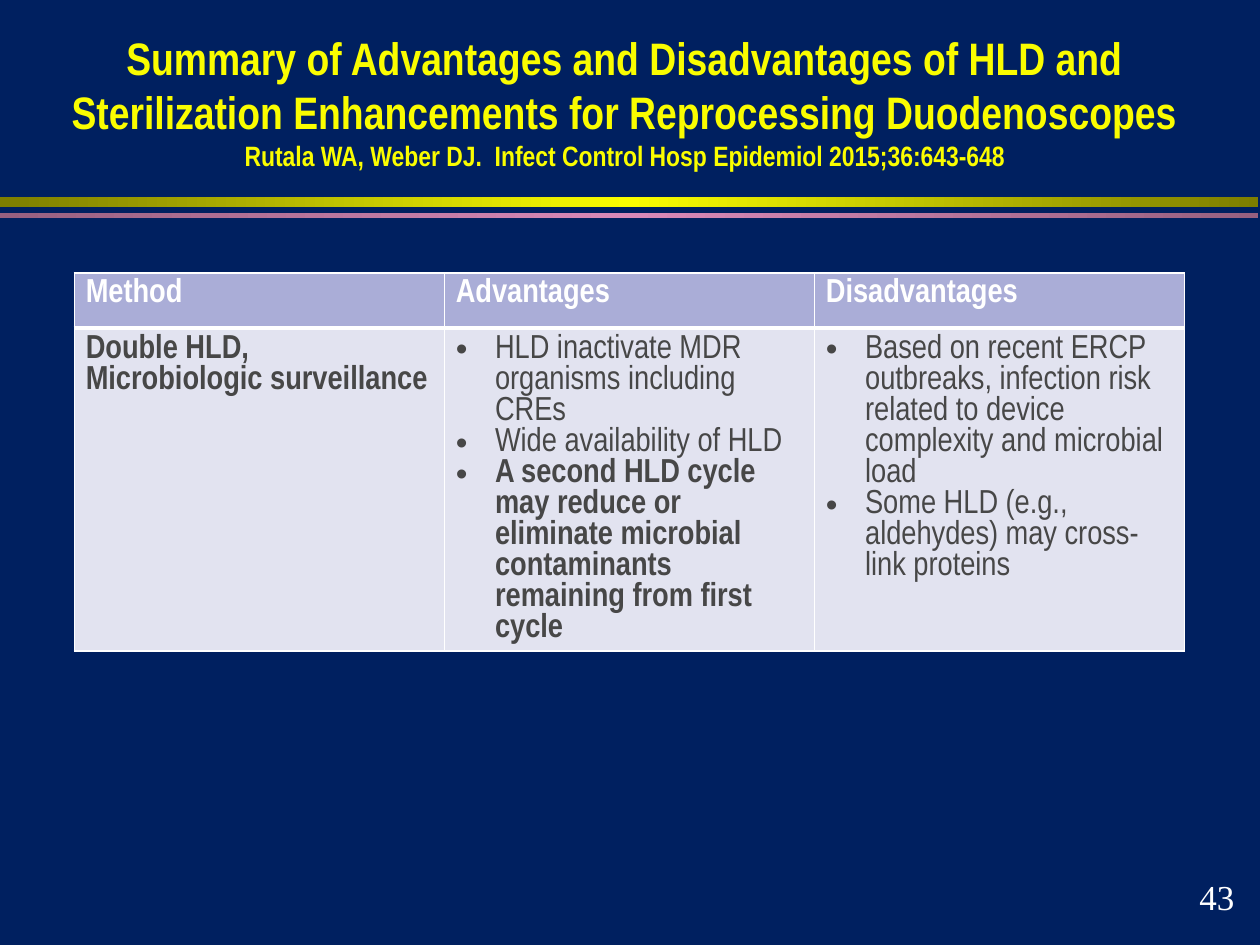
from copy import deepcopy
from dataclasses import dataclass

from lxml import etree
from pptx import Presentation, util as u
from pptx.dml.color import RGBColor
from pptx.enum import shapes, text
from pptx.oxml import ns

NARROW = "Arial Narrow"
YELLOW = "FAFD00"
WHITE = "FFFFFF"
GREY = "474747"


@dataclass
class Band:
    top: float
    height: float
    edge: str
    middle: str


@dataclass
class Item:
    text: str
    bold: bool = False
    color: str = GREY
    bullet: bool = False


BANDS = [
    Band(3.97, 0.2, "7D7E00", YELLOW),
    Band(4.29, 0.1, "976080", "D989B8"),
]

HEADER = [
    [Item(name, bold=True, color=WHITE)]
    for name in ("Method", "Advantages", "Disadvantages")
]
BODY = [
    [Item("Double HLD, Microbiologic surveillance", bold=True)],
    [
        Item("HLD inactivate MDR organisms including CREs", bullet=True),
        Item("Wide availability of HLD", bullet=True),
        Item(
            "A second HLD cycle may reduce or eliminate microbial "
            "contaminants remaining from first cycle",
            bold=True,
            bullet=True,
        ),
    ],
    [
        Item(
            "Based on recent ERCP outbreaks, infection risk related to "
            "device complexity and microbial load",
            bullet=True,
        ),
        Item("Some HLD (e.g., aldehydes) may cross-link proteins", bullet=True),
    ],
]


def rgb(value: str) -> RGBColor:
    return RGBColor.from_string(value)


def add_text(p, content: str, *, size: float, color: str, font: str = NARROW,
             bold: bool = False) -> None:
    r = p.add_run()
    r.text = content
    r.font.size = u.Pt(size)
    r.font.name = font
    r.font.bold = bold
    r.font.color.rgb = rgb(color)


def add_band(s, band: Band) -> None:
    sp = s.shapes.add_shape(shapes.MSO_SHAPE.RECTANGLE, 0, u.Cm(band.top),
                            u.Cm(25.37), u.Cm(band.height))
    sp.shadow.inherit = False
    sp.line.fill.background()
    sp.fill.gradient()
    sp.fill.gradient_angle = 0
    stop_list = sp._element.spPr.find(ns.qn("a:gradFill")).find(ns.qn("a:gsLst"))
    stop_list.append(deepcopy(stop_list[0]))
    colors = (band.edge, band.middle, band.edge)
    for i, (stop, color) in enumerate(zip(sp.fill.gradient_stops, colors)):
        stop.position = i / 2
        stop.color.rgb = rgb(color)


def add_bullet(p) -> None:
    pPr = p._p.get_or_add_pPr()
    pPr.set("marL", str(u.Cm(0.79)))
    pPr.set("indent", str(u.Cm(-0.79)))
    etree.SubElement(pPr, ns.qn("a:buFont"), typeface="Arial")
    etree.SubElement(pPr, ns.qn("a:buChar"), char="•")


def set_borders(cell, widths: dict[str, float]) -> None:
    tcPr = cell._tc.get_or_add_tcPr()
    for i, (side, width) in enumerate(widths.items()):
        ln = etree.Element(ns.qn(f"a:ln{side}"), w=str(u.Pt(width)))
        fill = etree.SubElement(ln, ns.qn("a:solidFill"))
        etree.SubElement(fill, ns.qn("a:srgbClr"), val=WHITE)
        tcPr.insert(i, ln)


def fill_cell(cell, items: list[Item], fill: str, widths: dict[str, float]) -> None:
    cell.fill.solid()
    cell.fill.fore_color.rgb = rgb(fill)
    cell.margin_left = u.Cm(0.23)
    cell.margin_right = u.Cm(0.25)
    cell.margin_top = cell.margin_bottom = u.Cm(0.12)
    set_borders(cell, widths)
    tf = cell.text_frame
    for i, item in enumerate(items):
        p = tf.add_paragraph() if i else tf.paragraphs[0]
        if item.bullet:
            add_bullet(p)
        add_text(p, item.text, size=19, color=item.color, bold=item.bold)


def add_methods_table(s) -> None:
    heights = (1.11, 6)
    table = s.shapes.add_table(2, 3, u.Cm(1.5), u.Cm(5.5), u.Cm(22.38),
                               u.Cm(sum(heights))).table
    table.first_row = table.horz_banding = False
    for column in table.columns:
        column.width = u.Cm(7.46)
    for row, height in zip(table.rows, heights):
        row.height = u.Cm(height)
    styles = [
        (HEADER, "AAADD7", {"L": 1, "R": 1, "T": 1, "B": 3}),
        (BODY, "E2E3F0", {"L": 1, "R": 1, "T": 3, "B": 1}),
    ]
    for row, (contents, fill, widths) in zip(table.rows, styles):
        for cell, items in zip(row.cells, contents):
            fill_cell(cell, items, fill, widths)


def add_title(s) -> None:
    tf = s.shapes.add_textbox(u.Cm(1.12), u.Cm(0.42), u.Cm(22.96),
                              u.Cm(3.18)).text_frame
    tf.word_wrap = True
    tf.vertical_anchor = text.MSO_ANCHOR.BOTTOM
    p = tf.paragraphs[0]
    p.alignment = text.PP_ALIGN.CENTER
    add_text(p, "Summary of Advantages and Disadvantages of HLD and "
             "Sterilization Enhancements for Reprocessing Duodenoscopes",
             size=26, color=YELLOW, bold=True)
    p.add_line_break()
    add_text(p, "Rutala WA, Weber DJ.  Infect Control Hosp Epidemiol "
             "2015;36:643-648", size=16, color=YELLOW, bold=True)


def add_page_number(s) -> None:
    tf = s.shapes.add_textbox(u.Cm(23.93), u.Cm(17.53), u.Cm(1.22),
                              u.Cm(1.12)).text_frame
    tf.word_wrap = False
    tf.auto_size = text.MSO_AUTO_SIZE.SHAPE_TO_FIT_TEXT
    add_text(tf.paragraphs[0], "43", size=20, color=WHITE, font="Times New Roman")


def main() -> None:
    prs = Presentation()
    prs.slide_width, prs.slide_height = u.Cm(25.4), u.Cm(19.05)
    s = prs.slides.add_slide(prs.slide_layouts[6])
    s.background.fill.solid()
    s.background.fill.fore_color.rgb = rgb("002060")
    for band in BANDS:
        add_band(s, band)
    add_methods_table(s)
    add_title(s)
    add_page_number(s)
    prs.save("out.pptx")


if __name__ == "__main__":
    main()
